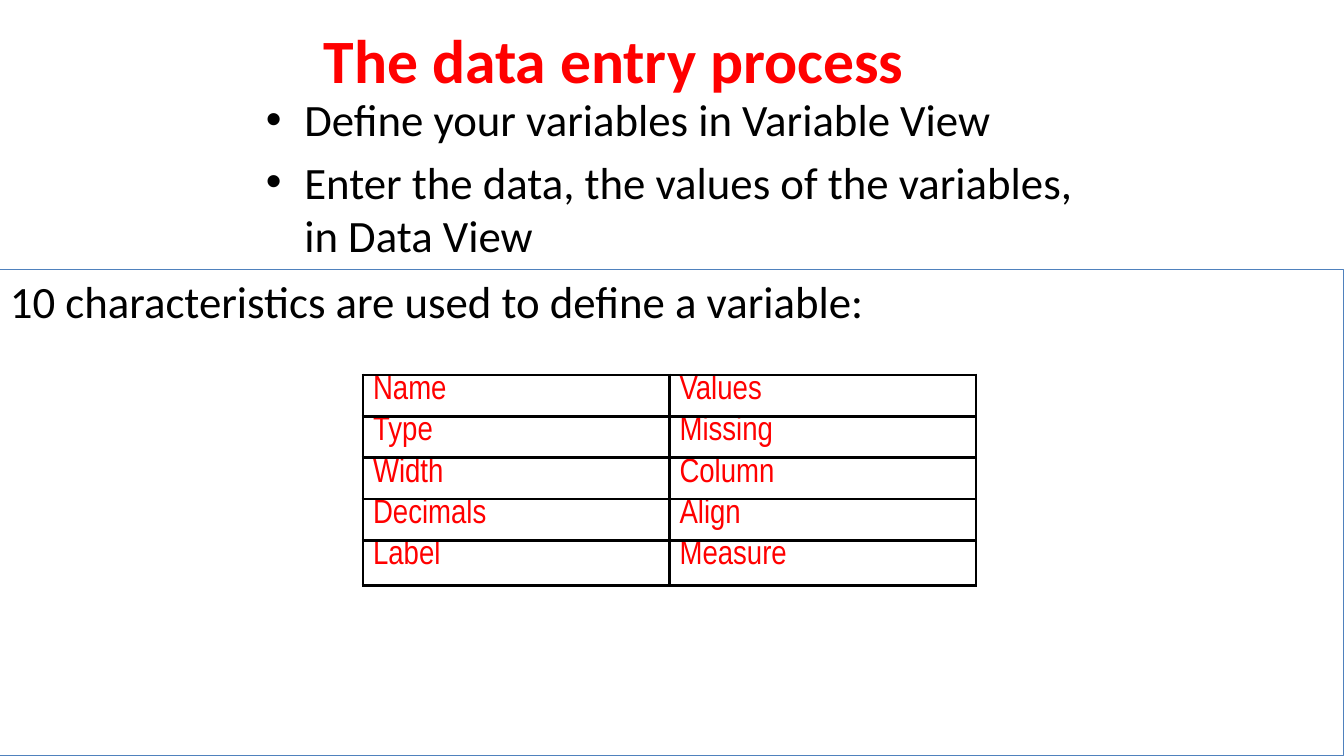
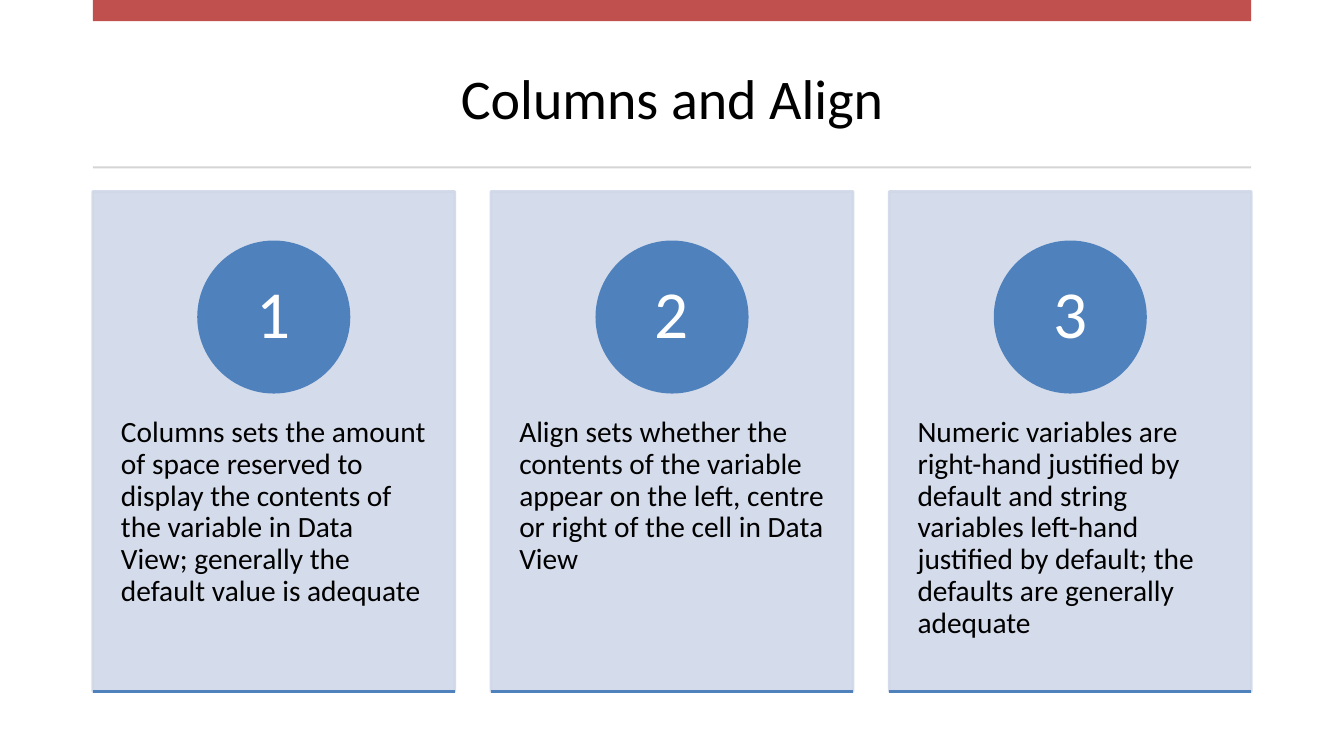
from dataclasses import dataclass

from lxml.etree import SubElement
from pptx import Presentation
from pptx.dml.color import RGBColor
from pptx.enum.shapes import MSO_CONNECTOR as Link, MSO_SHAPE as Form
from pptx.enum.text import MSO_ANCHOR as Anchor, PP_ALIGN as Align
from pptx.oxml.ns import qn
from pptx.util import Inches, Pt

WIDE, HIGH = 13.33, 7.5
BLACK, WHITE, RED = "000000", "FFFFFF", "FF0000"
BLUE, PALE, BRICK, GREY = "4F81BD", "D0D8E8", "C0504D", "D5D5D5"
LEFT, SPAN = 0.92, 11.49
CARD = 3.59
STEP = (SPAN - CARD) / 2
DISC = 1.49
PAD = (0.1, 0.05, 0.1, 0.05)


@dataclass(frozen=True)
class Box:
    x: float
    y: float
    w: float
    h: float

    def lengths(self) -> list:
        return [Inches(n) for n in (self.x, self.y, self.w, self.h)]


@dataclass(frozen=True)
class Style:
    size: float
    hue: str = BLACK
    font: str = "Calibri"
    bold: bool = False
    align: Align = Align.LEFT
    anchor: Anchor = Anchor.TOP
    pad: tuple = PAD
    before: float = 0
    line: float = 1.0
    bullet: bool = False


BODY = Style(32)
LIST = Style(32, before=6.4, bullet=True)
CELL = Style(24, RED, "Arial Narrow", pad=(0.1, 0, 0.1, 0))
NOTE = Style(21, pad=(0.28, 2.24, 0.28, 0.46), line=0.9)
DIGIT = Style(48, WHITE, align=Align.CENTER, anchor=Anchor.MIDDLE,
              pad=(0.12, 0.01, 0.12, 0.01), line=0.9)

FIELDS = [("Name", "Values"), ("Type", "Missing"), ("Width", "Column"),
          ("Decimals", "Align"), ("Label", "Measure")]
NOTES = [
    "Columns sets the amount of space reserved to display the contents of "
    "the variable in Data View; generally the default value is adequate",
    "Align sets whether the contents of the variable appear on the left, "
    "centre or right of the cell in Data View",
    "Numeric variables are right-hand justified by default and string "
    "variables left-hand justified by default; the defaults are generally "
    "adequate",
]


def tint(code: str) -> RGBColor:
    return RGBColor.from_string(code)


def write(host, text: str, style: Style) -> None:
    frame = host.text_frame
    frame.text = text
    frame.word_wrap = True
    host_pad = [Inches(n) for n in style.pad]
    (frame.margin_left, frame.margin_top,
     frame.margin_right, frame.margin_bottom) = host_pad
    frame.vertical_anchor = style.anchor
    for i, para in enumerate(frame.paragraphs):
        para.alignment = style.align
        para.line_spacing = style.line
        para.space_before = Pt(style.before if i else 0)
        if style.bullet:
            props = para._p.get_or_add_pPr()
            props.set("marL", str(Inches(0.38)))
            props.set("indent", str(-Inches(0.38)))
            SubElement(props, qn("a:buFont"), typeface="Arial")
            SubElement(props, qn("a:buChar"), char="•")
        for run in para.runs:
            run.font.size = Pt(style.size)
            run.font.name = style.font
            run.font.bold = style.bold
            run.font.color.rgb = tint(style.hue)


def label(slide, box: Box, text: str, style: Style) -> None:
    write(slide.shapes.add_textbox(*box.lengths()), text, style)


def title(slide, box: Box, text: str, size: float, hue: str = BLACK,
          bold: bool = False) -> None:
    label(slide, box, text, Style(size, hue, bold=bold, align=Align.CENTER,
                                  anchor=Anchor.MIDDLE))


def block(slide, box: Box, fill: str = "", edge: str = "",
          width: float = 2, form: Form = Form.RECTANGLE):
    shape = slide.shapes.add_shape(form, *box.lengths())
    shape.shadow.inherit = False
    if fill:
        shape.fill.solid()
        shape.fill.fore_color.rgb = tint(fill)
    else:
        shape.fill.background()
    if edge:
        shape.line.color.rgb = tint(edge)
        shape.line.width = Pt(width)
    else:
        shape.line.fill.background()
    return shape


def fade(shape, share: int) -> None:
    for node in shape._element.spPr.iter(qn("a:srgbClr")):
        SubElement(node, qn("a:alpha"), val=str(share * 1000))


def rule(slide, x: float, y: float, w: float) -> None:
    line = slide.shapes.add_connector(
        Link.STRAIGHT, Inches(x), Inches(y), Inches(x + w), Inches(y))
    line.line.color.rgb = tint(BLUE)
    line.line.width = Pt(2)
    SubElement(line._element.spPr, qn("a:effectLst"))


def frame_cell(cell) -> None:
    props = cell._tc.get_or_add_tcPr()
    for side in ("lnL", "lnR", "lnT", "lnB"):
        line = SubElement(props, qn(f"a:{side}"), w=str(Pt(2.25)))
        fill = SubElement(line, qn("a:solidFill"))
        SubElement(fill, qn("a:srgbClr"), val=BLACK)
    cell.fill.background()


def cell_text(cell, text: str, style: Style) -> None:
    write_cell = cell.text_frame
    write_cell.text = text
    (cell.margin_left, cell.margin_top,
     cell.margin_right, cell.margin_bottom) = [Inches(n) for n in style.pad]
    font = write_cell.paragraphs[0].runs[0].font
    font.size, font.name = Pt(style.size), style.font
    font.color.rgb = tint(style.hue)


def grid(slide, box: Box, rows: list) -> None:
    shape = slide.shapes.add_table(len(rows), len(rows[0]), *box.lengths())
    table = shape.table
    table.first_row = table.horz_banding = False
    for r, row in enumerate(rows):
        table.rows[r].height = Inches(0.41)
        for c, text in enumerate(row):
            cell = table.cell(r, c)
            cell_text(cell, text, CELL)
            frame_cell(cell)
    table.rows[len(rows) - 1].height = Inches(0.45)


def card(slide, i: int, text: str) -> None:
    x = LEFT + i * STEP
    box = Box(x, 1.9, CARD, 4.96)
    panel = block(slide, box, PALE, PALE)
    fade(panel, 90)
    write(panel, text, NOTE)
    disc = block(slide, Box(x + (CARD - DISC) / 2, 2.4, DISC, DISC),
                 BLUE, BLUE, form=Form.OVAL)
    write(disc, str(i + 1), DIGIT)
    rule(slide, x, box.y + box.h, CARD)


def entry(slide) -> None:
    label(slide, Box(2.54, 0.86, 8.5, 1.8),
          "Define your variables in Variable View\n"
          "Enter the data, the values of the variables, in Data View", LIST)
    title(slide, Box(1.84, 0.04, 8.5, 1.08), "The data entry process",
          44, RED, True)
    top = 2.67
    panel = block(slide, Box(0, top, WIDE, HIGH - top), edge=BLUE, width=0.75)
    write(panel, "10 characteristics are used to define a variable:", BODY)
    grid(slide, Box(3.6, 3.72, 6.08, 2.09), FIELDS)


def layout(slide) -> None:
    title(slide, Box(LEFT, 0.37, SPAN, 1.18), "Columns and Align", 40)
    block(slide, Box(LEFT, 0, SPAN, 0.21), BRICK)
    block(slide, Box(LEFT, 1.65, SPAN, 0.02), GREY)
    for i, text in enumerate(NOTES):
        card(slide, i, text)


def main() -> None:
    deck = Presentation()
    deck.slide_width, deck.slide_height = Inches(WIDE), Inches(HIGH)
    for draw in (entry, layout):
        draw(deck.slides.add_slide(deck.slide_layouts[6]))
    deck.save("out.pptx")


if __name__ == "__main__":
    main()
